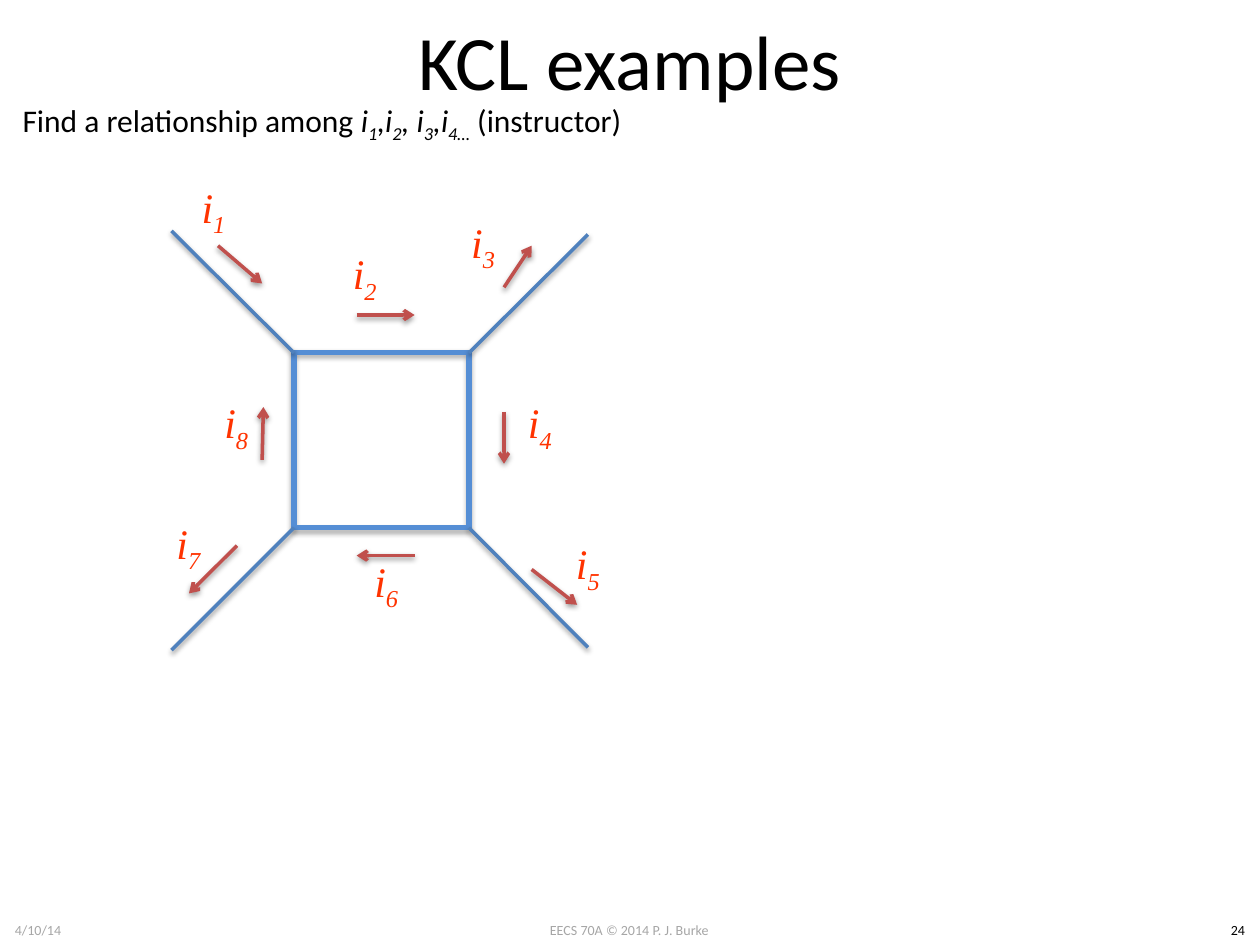
from lxml.etree import SubElement
from pptx import Presentation
from pptx.dml.color import RGBColor
from pptx.enum.shapes import MSO_CONNECTOR as Connector, MSO_SHAPE as Preset
from pptx.enum.text import MSO_ANCHOR as Anchor, PP_ALIGN as Align
from pptx.oxml.ns import qn
from pptx.util import Pt

BLACK, GREY = "000000", "A6A6A6"
WIRE, LOOP, ARROW, LABEL = "4F81BD", "558ED5", "C0504D", "FF3300"

# Per current: arrow start, arrow end, label corner (points inside the circuit box)
CURRENTS = [
    ((44.6, 42.4), (69.8, 64), (14.3, 0)),
    ((123.8, 82), (156.9, 82), (100.7, 38)),
    ((208, 66.2), (223.8, 42.4), (168.4, 20)),
    ((208, 137.4), (208, 167), (200.8, 123)),
    ((223.8, 227.4), (249.8, 247.6), (228.2, 203.7)),
    ((156.9, 219.5), (123.8, 219.5), (113, 213.8)),
    ((55.4, 213.8), (28, 241.1), (0, 192)),
    ((69.8, 164.8), (70.5, 134.6), (27.3, 123)),
]


def color(value):
    return RGBColor.from_string(value)


def write(frame, runs, size, font, hex_color, align=Align.LEFT, anchor=Anchor.TOP, wrap=True):
    """Fill a frame with runs of (text, italic, subscript)."""
    frame.word_wrap = wrap
    frame.vertical_anchor = anchor
    paragraph = frame.paragraphs[0]
    paragraph.alignment = align
    for text, italic, subscript in runs:
        run = paragraph.add_run()
        run.text = text
        formats = {"size": Pt(size), "name": font, "italic": italic}
        for name, value in formats.items():
            setattr(run.font, name, value)
        run.font.color.rgb = color(hex_color)
        if subscript:
            run.font._element.set("baseline", "-25000")


def add_text(slide, box, runs, *style, **options):
    shape = slide.shapes.add_textbox(*map(Pt, box))
    write(shape.text_frame, runs, *style, **options)


def style_outline(shape, hex_color, width, distance, opacity):
    """Set the line and a soft shadow straight below it."""
    shape.line.color.rgb = color(hex_color)
    shape.line.width = Pt(width)
    effects = SubElement(shape._element.spPr, qn("a:effectLst"))
    shadow = SubElement(effects, qn("a:outerShdw"), blurRad=str(Pt(3.1)), dist=str(Pt(distance)),
                        dir="5400000", rotWithShape="0")
    tint = SubElement(shadow, qn("a:srgbClr"), val=BLACK)
    SubElement(tint, qn("a:alpha"), val=str(opacity * 1000))


def add_line(slide, start, end, hex_color, arrow=False):
    line = slide.shapes.add_connector(Connector.STRAIGHT, *map(Pt, (*start, *end)))
    style_outline(line, hex_color, 2, 1.6, 38)
    if arrow:
        SubElement(line.line._get_or_add_ln(), qn("a:tailEnd"), type="arrow")


def add_header(slide, left, top, width):
    # Title
    title = slide.shapes.title
    box = {"left": left + 36, "top": top, "width": width - 72, "height": 68.4}
    for name, value in box.items():
        setattr(title, name, Pt(value))
    write(title.text_frame, [("KCL examples", False, False)], 44, "Calibri", BLACK,
          align=Align.CENTER, anchor=Anchor.MIDDLE)

    # Task, with alternating symbols and subscripts
    runs = [("Find a relationship among ", False, False)]
    for symbol, index in [("i", "1"), (",i", "2"), (", i", "3"), (",i", "4…")]:
        runs += [(symbol, True, False), (index, True, True)]
    runs.append((" (instructor)", False, False))
    add_text(slide, (left + 5.8, top + 54, 368.6, 28.8), runs, 18, "Calibri", BLACK, wrap=False)


def add_circuit(slide, left, top):
    def place(point):
        return left + point[0], top + point[1]

    # Square loop
    loop_x, loop_y, side = 88, 103.6, 100
    loop = slide.shapes.add_shape(Preset.RECTANGLE, *map(Pt, (*place((loop_x, loop_y)), side, side)))
    loop.fill.background()
    style_outline(loop, LOOP, 3, 1.8, 35)

    # Wires leaving the corners
    near_x, near_y, far_x, far_y = loop_x, loop_y, loop_x + side, loop_y + side
    for corner, end in [((near_x, near_y), (18, 34)), ((far_x, near_y), (256, 36)),
                        ((far_x, far_y), (256, 272)), ((near_x, far_y), (18, 273.5))]:
        add_line(slide, place(corner), place(end), WIRE)

    # Current arrows and labels
    for number, (start, end, label) in enumerate(CURRENTS, 1):
        add_line(slide, place(start), place(end), ARROW, arrow=True)
        add_text(slide, (*place(label), 55.4, 44), [("i", True, False), (str(number), True, True)],
                 24, "Times New Roman", LABEL, align=Align.CENTER, anchor=Anchor.MIDDLE)


def add_footer(slide, left, top, width):
    parts = [
        ("4/10/14", left + 1.4, 149, GREY, Align.LEFT, Anchor.MIDDLE),
        ("EECS 70A © 2014 P. J. Burke", left + 275.8, 167.8, GREY, Align.CENTER, Anchor.TOP),
        ("24", left + width - 25.2, 25.2, BLACK, Align.CENTER, Anchor.TOP),
    ]
    for text, x, part_width, hex_color, align, anchor in parts:
        add_text(slide, (x, top, part_width, 17), [(text, False, False)], 8, "Calibri", hex_color,
                 align=align, anchor=anchor)


def main():
    presentation = Presentation()
    presentation.slide_width, presentation.slide_height = Pt(720), Pt(540)
    slide = presentation.slides.add_slide(presentation.slide_layouts[5])
    add_header(slide, 0, 0, 720)
    add_circuit(slide, 80, 98)
    add_footer(slide, 0, 523, 720)
    presentation.save("out.pptx")


if __name__ == "__main__":
    main()
